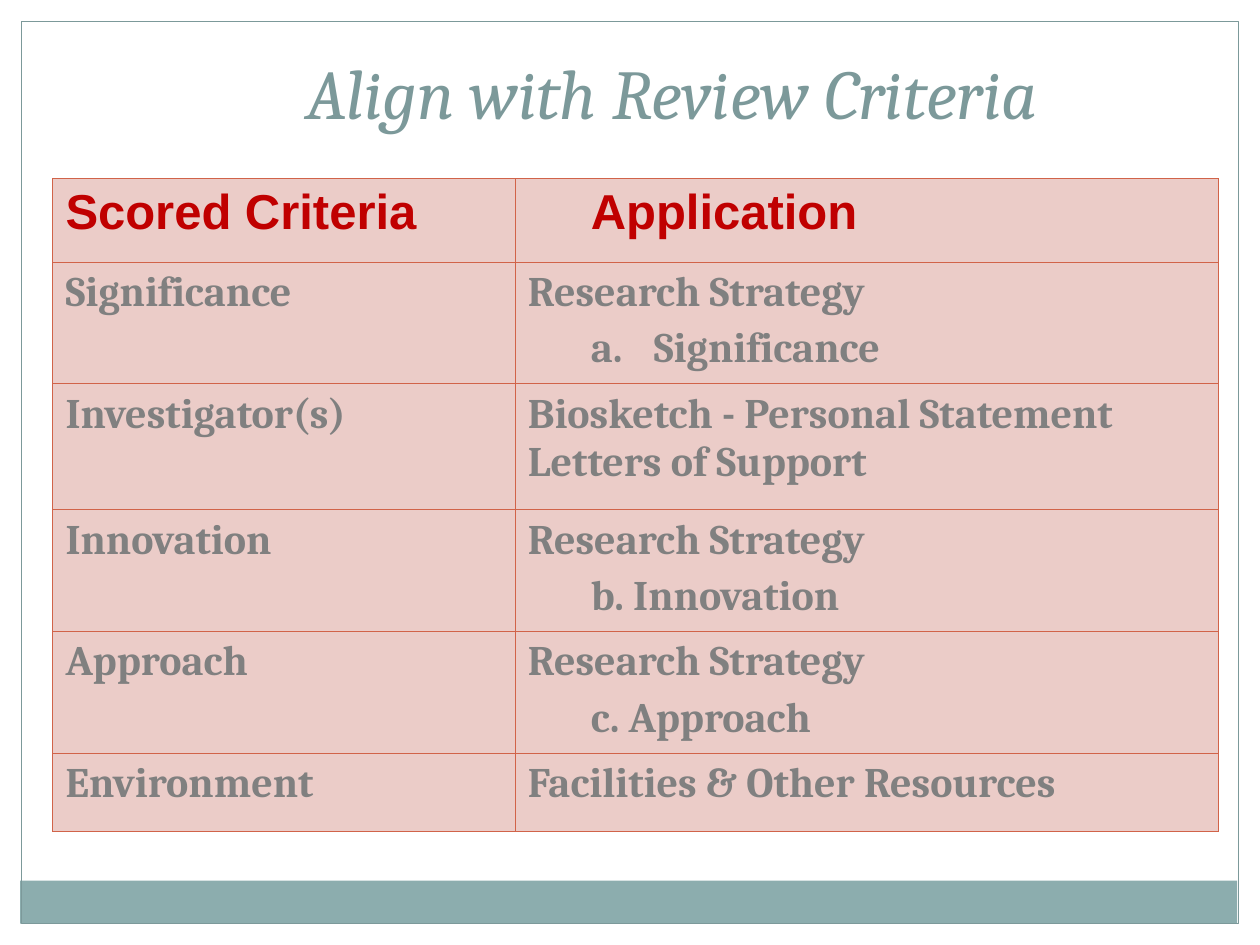
from lxml.etree import SubElement
from pptx import Presentation
from pptx.dml.color import RGBColor
from pptx.enum.shapes import MSO_SHAPE
from pptx.enum.text import MSO_ANCHOR, PP_ALIGN
from pptx.oxml.ns import qn
from pptx.util import Inches, Pt

WHITE = RGBColor(0xFF, 0xFF, 0xFF)
TEAL = RGBColor(0x8C, 0xAD, 0xAE)
DARK_TEAL = RGBColor(0x7C, 0x99, 0x9A)
RED = RGBColor(0xC0, 0x00, 0x00)
GRAY = RGBColor(0x80, 0x80, 0x80)
PINK = RGBColor(0xEB, 0xCC, 0xC8)
RUST = RGBColor(0xD1, 0x63, 0x49)

# Paragraph kinds: left margin, first-line indent, space before as share of size
PLAIN = (0, 0, 0.2)
INDENTED = (0.5, 0, 0.2)
LETTERED = (1, -0.5, 0.2)
HANGING = (0.25, -0.25, 0.2)
TIGHT = (0, 0, 0)


class SlideBuilder:
    def __init__(self, slide):
        self.s = slide

    def rect(self, x, y, w, h, fill=None, line=None):
        sp = self.s.shapes.add_shape(
            MSO_SHAPE.RECTANGLE, Inches(x), Inches(y), Inches(w), Inches(h))
        sp.shadow.inherit = False
        if fill is None:
            sp.fill.background()
        else:
            sp.fill.solid()
            sp.fill.fore_color.rgb = fill
        if line is None:
            sp.line.fill.background()
        else:
            sp.line.color.rgb = line
            sp.line.width = Pt(0.75)

    def font(self, p, name, size, color, bold=False, italic=False):
        f = p.font
        f.name, f.size, f.bold, f.italic = name, Pt(size), bold, italic
        f.color.rgb = color

    def title(self, text, x, y, w, h):
        tf = self.s.shapes.add_textbox(
            Inches(x), Inches(y), Inches(w), Inches(h)).text_frame
        tf.word_wrap = True
        tf.vertical_anchor = MSO_ANCHOR.TOP
        p = tf.paragraphs[0]
        p.text = text
        p.alignment = PP_ALIGN.CENTER
        self.font(p, "Cambria", 40, DARK_TEAL, italic=True)

    def borders(self, cell):
        tc_pr = cell._tc.get_or_add_tcPr()
        for i, side in enumerate(("a:lnL", "a:lnR", "a:lnT", "a:lnB")):
            ln = tc_pr.makeelement(qn(side), {"w": str(Pt(0.75))})
            fill = SubElement(ln, qn("a:solidFill"))
            SubElement(fill, qn("a:srgbClr"), val=str(RUST))
            tc_pr.insert(i, ln)

    def cell(self, cell, lines, name, size, color):
        cell.fill.solid()
        cell.fill.fore_color.rgb = PINK
        self.borders(cell)
        tf = cell.text_frame
        for i, (text, kind) in enumerate(lines):
            p = tf.add_paragraph() if i else tf.paragraphs[0]
            p.text = text
            margin, indent, before = kind
            p.space_before = Pt(size * before)
            p_pr = p._p.get_or_add_pPr()
            p_pr.set("marL", str(Inches(margin)))
            p_pr.set("indent", str(Inches(indent)))
            if kind is LETTERED:
                SubElement(p_pr, qn("a:buAutoNum"), type="alphaLcPeriod")
            self.font(p, name, size, color, bold=True)

    def table(self, x, y, widths, heights, rows):
        tbl = self.s.shapes.add_table(
            len(heights), len(widths), Inches(x), Inches(y),
            Inches(sum(widths)), Inches(sum(heights))).table
        for col, w in zip(tbl.columns, widths):
            col.width = Inches(w)
        for i, (h, row) in enumerate(zip(heights, rows)):
            tbl.rows[i].height = Inches(h)
            style = ("Cambria", 24, GRAY) if i else ("Arial", 28, RED)
            for j, lines in enumerate(row):
                self.cell(tbl.cell(i, j), lines, *style)


def main():
    prs = Presentation()
    prs.slide_width, prs.slide_height = Inches(10), Inches(7.5)
    b = SlideBuilder(prs.slides.add_slide(prs.slide_layouts[6]))

    # White margins, footer band and frame
    b.rect(0, 0, 10, 0.17, fill=WHITE)
    b.rect(9.83, 0, 0.17, 7.5, fill=WHITE)
    b.rect(0, 0, 0.17, 7.5, fill=WHITE)
    b.rect(0.16, 6.99, 9.66, 0.34, fill=TEAL)
    b.rect(0.17, 0.17, 9.66, 7.16, line=DARK_TEAL)

    # Title
    b.title("Align with Review Criteria", 0.67, 0.34, 9.33, 1.25)

    # Criteria and the application part that answers each one
    strategy = ("Research Strategy", PLAIN)
    criteria = [
        ("Scored Criteria", [("Application", INDENTED)]),
        ("Significance", [strategy, ("Significance", LETTERED)]),
        ("Investigator(s)", [("Biosketch - Personal Statement", HANGING),
                             ("Letters of Support", TIGHT)]),
        ("Innovation", [strategy, ("b. Innovation", INDENTED)]),
        ("Approach", [strategy, ("c. Approach", INDENTED)]),
        ("Environment", [("Facilities & Other Resources", PLAIN)]),
    ]
    rows = [([(name, PLAIN)], lines) for name, lines in criteria]
    b.table(0.42, 1.42, (3.67, 5.58), (0.66, 0.96, 1, 0.96, 0.96, 0.62), rows)

    prs.save("out.pptx")


if __name__ == "__main__":
    main()
